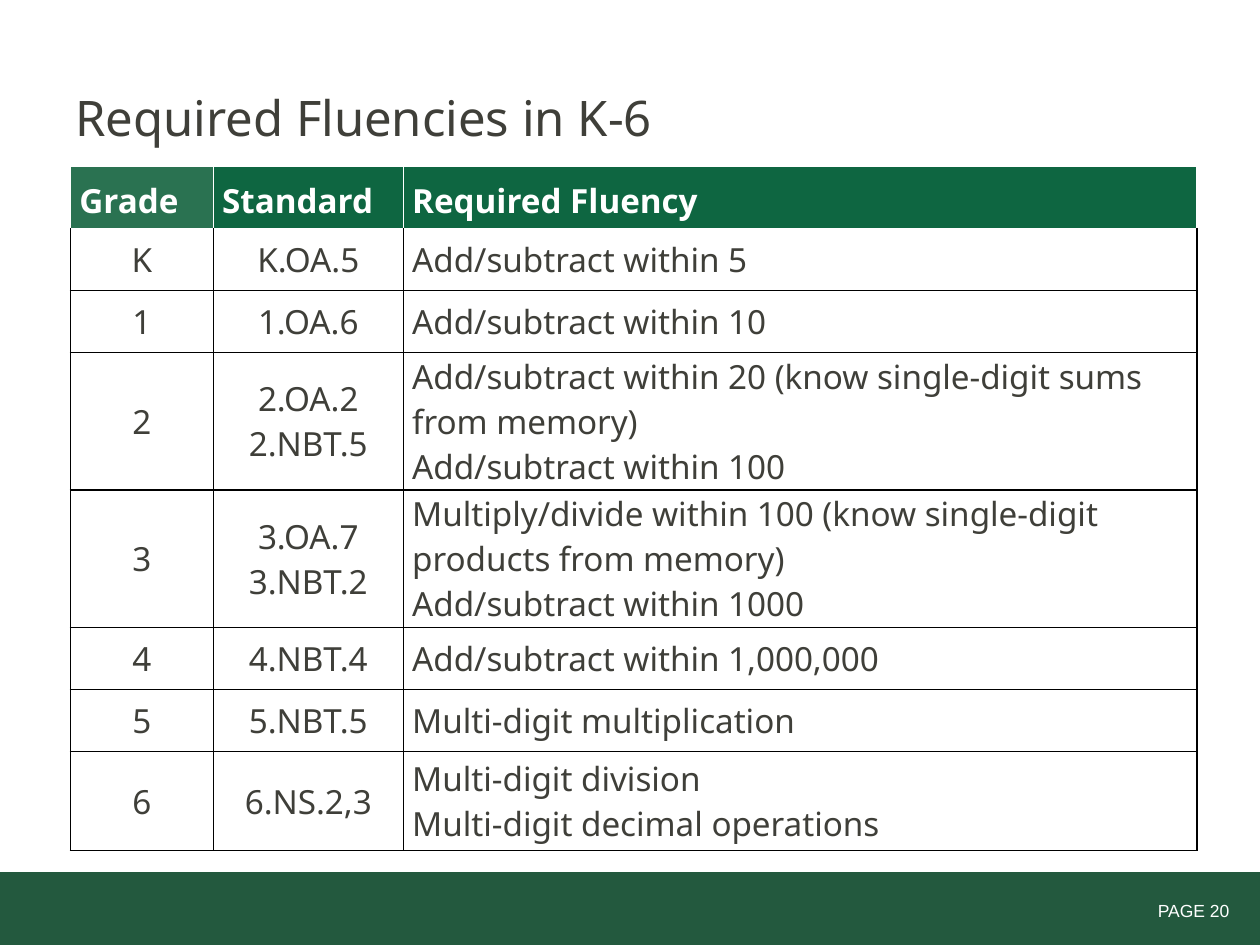
import pptx
import pptx.dml.color
import pptx.enum.shapes
import pptx.enum.text
import pptx.oxml
import pptx.oxml.ns
import pptx.util
from pptx.util import Cm

ALIGN = pptx.enum.text.PP_ALIGN
MIDDLE = pptx.enum.text.MSO_ANCHOR.MIDDLE
INK, WHITE, BLACK = "3F3F39", "FFFFFF", "000000"
FOOTER_GREEN, HEADER_GREEN, GRADE_GREEN = "23593E", "0E6641", "2A7251"

HEADINGS = ["Grade", "Standard", "Required Fluency"]
FLUENCIES = [
    ("K", ["K.OA.5"], ["Add/subtract within 5"]),
    ("1", ["1.OA.6"], ["Add/subtract within 10"]),
    ("2", ["2.OA.2", "2.NBT.5"],
     ["Add/subtract within 20 (know single-digit sums from memory)",
      "Add/subtract within 100"]),
    ("3", ["3.OA.7", "3.NBT.2"],
     ["Multiply/divide within 100 (know single-digit products from memory)",
      "Add/subtract within 1000"]),
    ("4", ["4.NBT.4"], ["Add/subtract within 1,000,000"]),
    ("5", ["5.NBT.5"], ["Multi-digit multiplication"]),
    ("6", ["6.NS.2,3"], ["Multi-digit division", "Multi-digit decimal operations"]),
]
COLUMN_WIDTHS = [2.88, 3.83, 16]
ROW_HEIGHTS = [1.25, 1.25, 1.25, 2.77, 2.77, 1.25, 1.25, 2]


def rgb(hex_color):
    return pptx.dml.color.RGBColor.from_string(hex_color)


class FluencySlide:
    font = "Noto Sans"

    def __init__(self, slide):
        self.slide = slide

    def add_lines(self, frame, lines, size, color, font=None, bold=False,
                  align=ALIGN.LEFT, spacing=1.0):
        """Put each line in its own paragraph."""
        for index, line in enumerate(lines):
            paragraph = frame.add_paragraph() if index else frame.paragraphs[0]
            paragraph.alignment = align
            paragraph.line_spacing = spacing
            run = paragraph.add_run()
            run.text = line
            run.font.name = font or self.font
            run.font.size = pptx.util.Pt(size)
            run.font.bold = bold
            run.font.color.rgb = rgb(color)

    def text(self, left, top, width, height, line, size, color, **style):
        frame = self.slide.shapes.add_textbox(
            Cm(left), Cm(top), Cm(width), Cm(height)).text_frame
        frame.word_wrap = True
        frame.vertical_anchor = MIDDLE
        self.add_lines(frame, [line], size, color, **style)

    def band(self, left, top, width, height, color):
        band = self.slide.shapes.add_shape(
            pptx.enum.shapes.MSO_SHAPE.RECTANGLE,
            Cm(left), Cm(top), Cm(width), Cm(height))
        band.shadow.inherit = False
        band.fill.solid()
        band.fill.fore_color.rgb = rgb(color)
        band.line.fill.background()

    def table(self, left, top, widths, heights):
        table = self.slide.shapes.add_table(
            len(heights), len(widths), Cm(left), Cm(top),
            Cm(sum(widths)), Cm(sum(heights))).table
        for column, width in zip(table.columns, widths):
            column.width = Cm(width)
        for row, height in zip(table.rows, heights):
            row.height = Cm(height)
        return table

    def cell(self, cell, lines, color, border, top_border, fill=None, **style):
        cell.margin_left = cell.margin_right = Cm(0.18)
        cell.margin_top = cell.margin_bottom = 0
        cell.vertical_anchor = MIDDLE
        self.borders(cell, border, top_border)
        if fill:
            cell.fill.solid()
            cell.fill.fore_color.rgb = rgb(fill)
        else:
            cell.fill.background()
        self.add_lines(cell.text_frame, lines, 19, color, **style)

    def borders(self, cell, color, top_color):
        """Draw four 1 pt edges; they must come before the fill."""
        properties = cell._tc.get_or_add_tcPr()
        for side in "LRTB":
            edge_color = top_color if side == "T" else color
            properties.append(pptx.oxml.parse_xml(
                f'<a:ln{side} {pptx.oxml.ns.nsdecls("a")} w="12700"><a:solidFill>'
                f'<a:srgbClr val="{edge_color}"/></a:solidFill></a:ln{side}>'))


def main():
    deck = pptx.Presentation()
    deck.slide_width, deck.slide_height = Cm(25.4), Cm(19.05)
    page = FluencySlide(deck.slides.add_slide(deck.slide_layouts[6]))

    page.band(0, 17.58, 25.4, 1.47, FOOTER_GREEN)
    page.text(21.03, 18.02, 4, 0.68, "PAGE 20", 10, WHITE,
              font="Arial", align=ALIGN.RIGHT)
    page.text(1.27, 0.76, 22.86, 3.18, "Required Fluencies in K-6", 28, INK)

    table = page.table(1.42, 3.36, COLUMN_WIDTHS, ROW_HEIGHTS)
    for column, heading in enumerate(HEADINGS):
        page.cell(table.cell(0, column), [heading], WHITE, WHITE, WHITE,
                  fill=HEADER_GREEN if column else GRADE_GREEN,
                  bold=True, spacing=1.15)
    for row, (grade, standards, skills) in enumerate(FLUENCIES, start=1):
        for column, lines in enumerate([[grade], standards, skills]):
            page.cell(table.cell(row, column), lines, INK, BLACK,
                      WHITE if row == 1 else BLACK,
                      align=ALIGN.LEFT if column == 2 else ALIGN.CENTER)

    deck.save("out.pptx")


if __name__ == "__main__":
    main()
